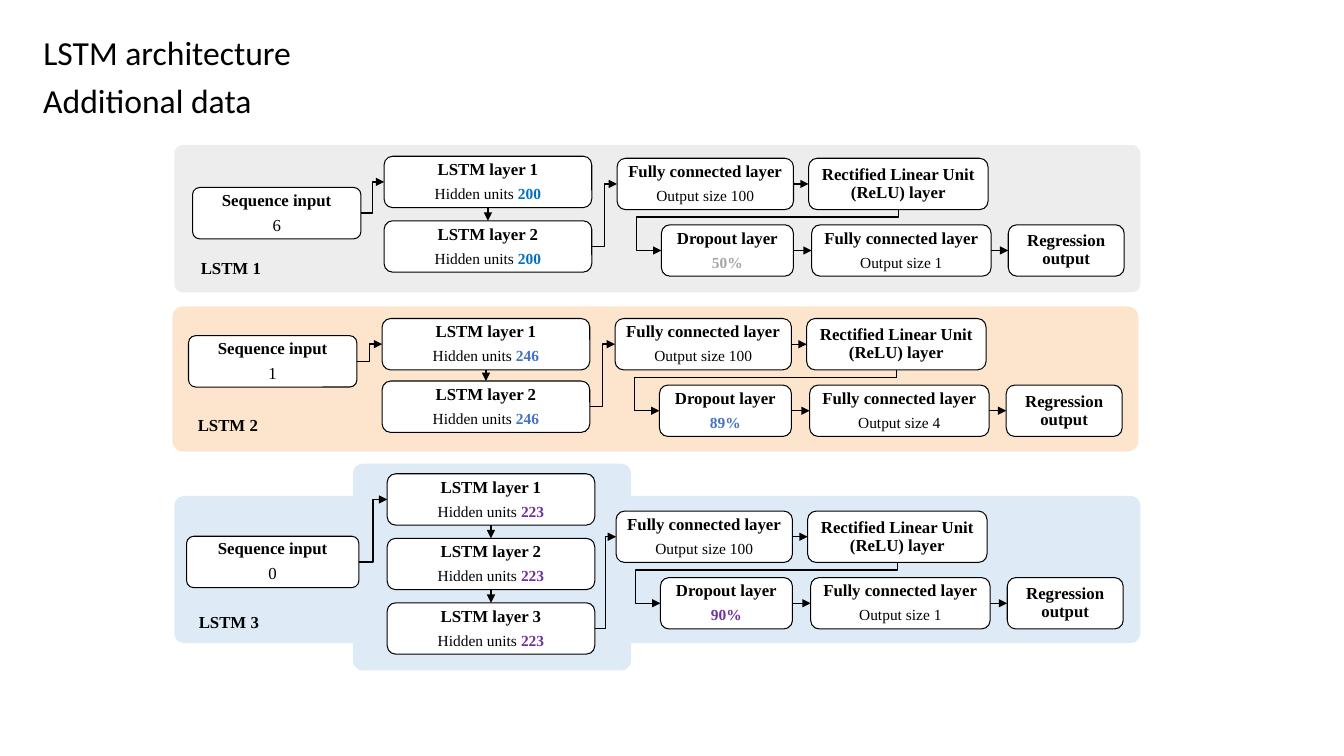
"""Build a slide that compares three LSTM network architectures."""
import pptx
import pptx.util
import pptx.dml.color
import pptx.enum.shapes
import pptx.enum.text
import pptx.oxml
import pptx.oxml.ns

Inches = pptx.util.Inches
Pt = pptx.util.Pt
RGBColor = pptx.dml.color.RGBColor
MSO_SHAPE = pptx.enum.shapes.MSO_SHAPE
STRAIGHT = pptx.enum.shapes.MSO_CONNECTOR.STRAIGHT
ELBOW = pptx.enum.shapes.MSO_CONNECTOR.ELBOW
PP_ALIGN = pptx.enum.text.PP_ALIGN
MSO_ANCHOR = pptx.enum.text.MSO_ANCHOR
MSO_AUTO_SIZE = pptx.enum.text.MSO_AUTO_SIZE

BLACK = RGBColor(0x00, 0x00, 0x00)
WHITE = RGBColor(0xFF, 0xFF, 0xFF)
GRAY = RGBColor(0xA5, 0xA5, 0xA5)
BRIGHT_BLUE = RGBColor(0x00, 0x70, 0xC0)
BLUE = RGBColor(0x44, 0x72, 0xC4)
PURPLE = RGBColor(0x70, 0x30, 0xA0)
PALE_GRAY = RGBColor(0xED, 0xED, 0xED)
PALE_ORANGE = RGBColor(0xFD, 0xE5, 0xCD)
PALE_BLUE = RGBColor(0xDE, 0xEB, 0xF7)

TOP, LEFT, BOTTOM, RIGHT = range(4)
BOX_HEIGHT = 0.51
LAYER_WIDTH = 2.06

presentation = pptx.Presentation()
presentation.slide_width = Inches(13.33)
presentation.slide_height = Inches(7.5)
slide = presentation.slides.add_slide(presentation.slide_layouts[5])


def add_box(left, top, width, height, heading, detail="", accent="",
            accent_color=BLACK, detail_size=11, corner=0.167, filled=True):
    """Add a rounded box with a bold heading and an optional detail line."""
    box = slide.shapes.add_shape(MSO_SHAPE.ROUNDED_RECTANGLE, Inches(left),
                                 Inches(top), Inches(width), Inches(height))
    box.adjustments[0] = corner
    box.shadow.inherit = False
    if filled:
        box.fill.solid()
        box.fill.fore_color.rgb = WHITE
        box.line.color.rgb = BLACK
        box.line.width = Pt(0.75)
    else:
        box.fill.background()
        box.line.fill.background()
    frame = box.text_frame
    frame.word_wrap = True
    frame.vertical_anchor = MSO_ANCHOR.MIDDLE
    frame.margin_left = frame.margin_right = Inches(0.08)
    frame.margin_top = frame.margin_bottom = Inches(0.04)
    rows = [(heading, "", 12, True)]
    if detail or accent:
        rows.append((detail, accent, detail_size, False))
    for index, (plain, colored, size, bold) in enumerate(rows):
        paragraph = frame.paragraphs[0] if index == 0 else frame.add_paragraph()
        paragraph.alignment = PP_ALIGN.CENTER
        paragraph.line_spacing = 0.9
        paragraph.space_after = Pt(5)
        paragraph.font.name = "Times New Roman"
        paragraph.font.size = Pt(size)
        paragraph.font.bold = bold
        paragraph.font.color.rgb = BLACK
        if plain:
            paragraph.add_run().text = plain
        if colored:
            run = paragraph.add_run()
            run.text = colored
            run.font.bold = True
            run.font.color.rgb = accent_color
    return box


def add_arrow(kind, begin, end, begin_side=None, end_side=None):
    """Add an arrow between two shapes, or between two points without sides."""
    if begin_side is None:
        arrow = slide.shapes.add_connector(kind, *begin, *end)
    else:
        arrow = slide.shapes.add_connector(kind, 0, 0, 0, 0)
        arrow.begin_connect(begin, begin_side)
        arrow.end_connect(end, end_side)
    arrow.line.color.rgb = BLACK
    arrow.line.width = Pt(1)
    properties = arrow._element.spPr
    line = properties.find(pptx.oxml.ns.qn("a:ln"))
    head = pptx.oxml.parse_xml(
        f'<a:tailEnd {pptx.oxml.ns.nsdecls("a")} type="triangle"/>')
    line.append(head)
    properties.append(pptx.oxml.parse_xml(
        f'<a:effectLst {pptx.oxml.ns.nsdecls("a")}/>'))
    return arrow


title = slide.shapes.title
subtitle = slide.shapes.add_textbox(0, 0, 0, 0)
for shape, top, text in [(title, 0.27, "LSTM architecture"),
                         (subtitle, 0.74, "Additional data")]:
    shape.left, shape.top = Inches(0.33), Inches(top)
    shape.width, shape.height = Inches(3.01), Inches(0.5)
    frame = shape.text_frame
    frame.word_wrap = True
    frame.auto_size = MSO_AUTO_SIZE.NONE
    frame.vertical_anchor = MSO_ANCHOR.TOP
    paragraph = frame.paragraphs[0]
    paragraph.text = text
    paragraph.alignment = PP_ALIGN.LEFT
    paragraph.font.name = "Calibri"
    paragraph.font.size = Pt(24)
    paragraph.font.color.rgb = BLACK

panels = [
    (3.5, 4.6, 2.76, 2.05, 0.049, PALE_BLUE),
    (1.73, 1.44, 9.58, 1.46, 0.055, PALE_GRAY),
    (1.73, 4.92, 9.58, 1.46, 0.063, PALE_BLUE),
    (1.71, 3.04, 9.58, 1.44, 0.074, PALE_ORANGE),
]
for left, top, width, height, corner, color in panels:
    panel = slide.shapes.add_shape(MSO_SHAPE.ROUNDED_RECTANGLE, Inches(left),
                                   Inches(top), Inches(width), Inches(height))
    panel.adjustments[0] = corner
    panel.shadow.inherit = False
    panel.fill.solid()
    panel.fill.fore_color.rgb = color
    panel.line.fill.background()

# name, label place, input (left, top, width, size), layers (left, top, step,
networks = [
    ("LSTM 1", (1.9, 2.54), (1.91, 1.86, 1.67, "6"), (3.81, 1.55, 0.64, 2),
     ("200", BRIGHT_BLUE), (6.12, 1.57), ("50%", GRAY), "1"),
    ("LSTM 2", (1.87, 4.1), (1.87, 3.33, 1.67, "1"), (3.79, 3.16, 0.62, 2),
     ("246", BLUE), (6.1, 3.16), ("89%", BLUE), "4"),
    ("LSTM 3", (1.88, 6.05), (1.85, 5.32, 1.71, "0"), (3.84, 4.7, 0.64, 3),
     ("223", PURPLE), (6.11, 5.07), ("90%", PURPLE), "1"),
]
for (name, label_place, sequence, stack, hidden, head_place, dropout,
     output_size) in networks:
    add_box(*label_place, 0.78, 0.26, name, corner=0.139, filled=False)

    left, top, width, input_size = sequence
    sequence_box = add_box(left, top, width, BOX_HEIGHT, "Sequence input",
                           input_size, detail_size=12, corner=0.139)

    left, top, step, count = stack
    layers = [add_box(left, top + index * step, LAYER_WIDTH, BOX_HEIGHT,
                      f"LSTM layer {index + 1}", "Hidden units ", *hidden)
              for index in range(count)]

    left, top = head_place
    lower = top + 0.66
    connected = add_box(left, top, 1.75, BOX_HEIGHT, "Fully connected layer",
                        "Output size 100")
    relu = add_box(left + 1.9, top, 1.78, BOX_HEIGHT,
                   "Rectified Linear Unit (ReLU) layer")
    dropout_box = add_box(left + 0.44, lower, 1.31, BOX_HEIGHT,
                          "Dropout layer", "", *dropout)
    final = add_box(left + 1.93, lower, 1.78, BOX_HEIGHT,
                    "Fully connected layer", f"Output size {output_size}")
    regression = add_box(left + 3.88, lower, 1.15, BOX_HEIGHT,
                         "Regression output")

    add_arrow(ELBOW, sequence_box, layers[0], RIGHT, LEFT)
    for upper_layer, lower_layer in zip(layers, layers[1:]):
        add_arrow(STRAIGHT, upper_layer, lower_layer, BOTTOM, TOP)
    add_arrow(ELBOW, layers[-1], connected, RIGHT, LEFT)
    for begin, end in [(connected, relu), (dropout_box, final),
                       (final, regression)]:
        add_arrow(STRAIGHT, begin, end, RIGHT, LEFT)

    begin_x, begin_y = relu.left + relu.width // 2, relu.top + relu.height
    end_x, end_y = dropout_box.left, dropout_box.top + dropout_box.height // 2
    center_x, center_y = (begin_x + end_x) // 2, (begin_y + end_y) // 2
    half_run, half_drop = (begin_x - end_x) // 2, (end_y - begin_y) // 2
    bend = add_arrow(ELBOW, (center_x - half_drop, center_y - half_run),
                     (center_x + half_drop, center_y + half_run))
    properties = bend._element.spPr
    properties.find(pptx.oxml.ns.qn("a:xfrm")).set("rot", "5400000")
    geometry = properties.find(pptx.oxml.ns.qn("a:prstGeom"))
    geometry.set("prst", "bentConnector4")
    guides = geometry.find(pptx.oxml.ns.qn("a:avLst"))
    for guide, value in [("adj1", 18400), ("adj2", 110600)]:
        guides.append(pptx.oxml.parse_xml(
            f'<a:gd {pptx.oxml.ns.nsdecls("a")} name="{guide}" fmla="val {value}"/>'))

presentation.save("out.pptx")
